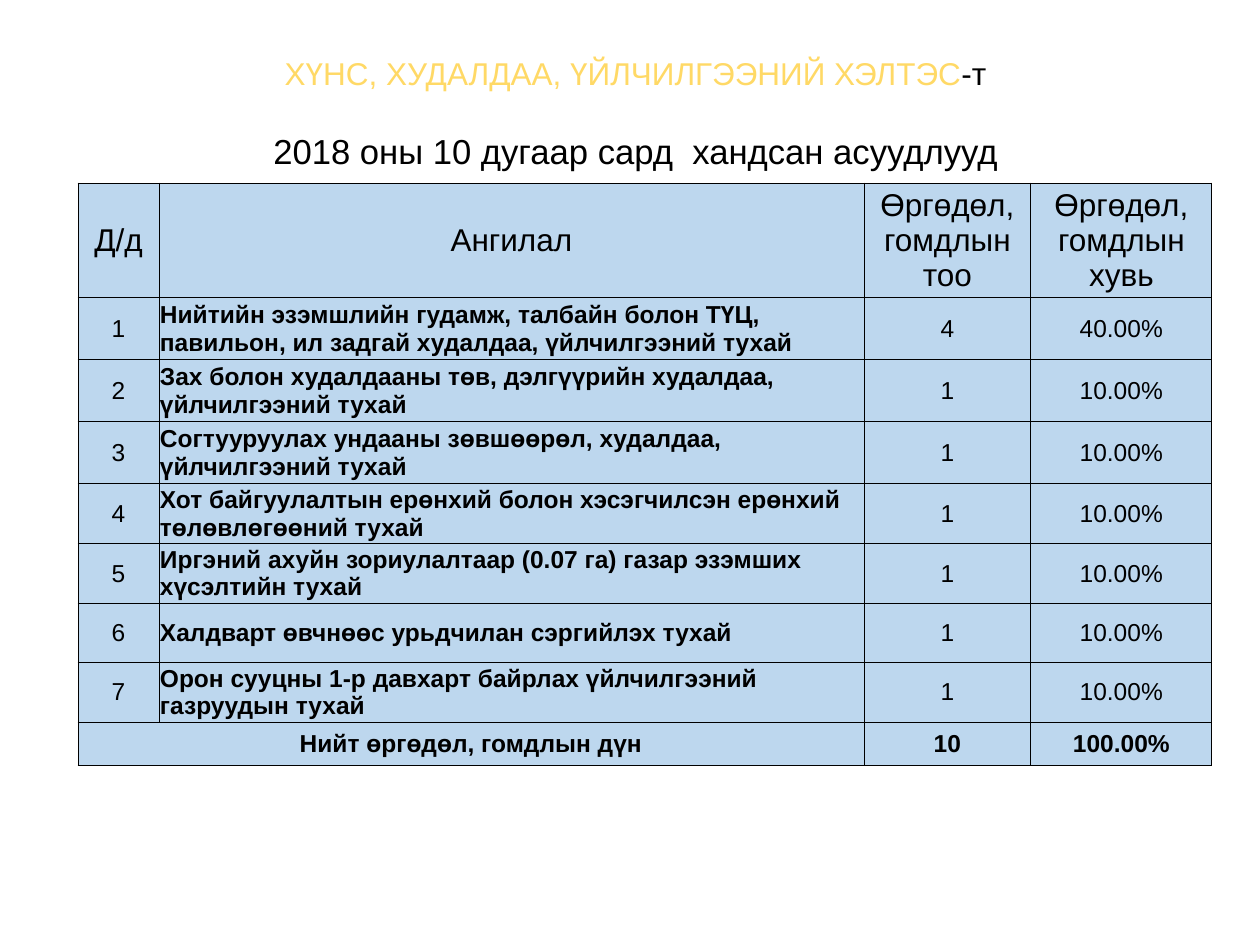
from lxml import etree
from pptx import Presentation
from pptx.dml.color import RGBColor
from pptx.enum.text import MSO_ANCHOR, PP_ALIGN
from pptx.oxml.ns import qn
from pptx.util import Emu, Pt

CENTER, LEFT = PP_ALIGN.CENTER, PP_ALIGN.LEFT
MIDDLE = MSO_ANCHOR.MIDDLE
EMU_PER_PX = 914400 / 126
FONT = "Arial"
BLACK, GOLD, LIGHT_BLUE = "000000", "FFD966", "BDD7EE"

COLUMN_WIDTHS = [81, 705, 167, 181]
ROW_HEIGHTS = [83, 62, 62, 62, 44, 59, 59, 59, 44]
HEADINGS = ["Д/д", "Ангилал", "Өргөдөл, гомдлын тоо", "Өргөдөл, гомдлын хувь"]
ISSUES = [
    ("Нийтийн эзэмшлийн гудамж, талбайн болон ТҮЦ, павильон, ил задгай худалдаа, "
     "үйлчилгээний тухай", 4),
    ("Зах болон худалдааны төв, дэлгүүрийн худалдаа, үйлчилгээний тухай", 1),
    ("Согтууруулах ундааны зөвшөөрөл, худалдаа, үйлчилгээний тухай", 1),
    ("Хот байгуулалтын ерөнхий болон хэсэгчилсэн ерөнхий төлөвлөгөөний тухай", 1),
    ("Иргэний ахуйн зориулалтаар (0.07 га) газар эзэмших хүсэлтийн тухай", 1),
    ("Халдварт өвчнөөс урьдчилан сэргийлэх тухай", 1),
    ("Орон сууцны 1-р давхарт байрлах үйлчилгээний газруудын тухай", 1),
]


def px(length):
    return Emu(round(length * EMU_PER_PX))


def color(hex_value):
    return RGBColor.from_string(hex_value)


def style(paragraph, size, bold=False, align=CENTER):
    paragraph.alignment = align
    font = paragraph.font
    font.name, font.size, font.bold = FONT, Pt(size), bold
    font.color.rgb = color(BLACK)


def add_title(slide, left, top, width, height):
    frame = slide.shapes.add_textbox(px(left), px(top), px(width), px(height)).text_frame
    frame.word_wrap = True
    frame.vertical_anchor = MIDDLE
    frame.margin_top = frame.margin_bottom = 0

    department = frame.paragraphs[0]
    style(department, 18)
    for text, tint in [("ХҮНС, ХУДАЛДАА, ҮЙЛЧИЛГЭЭНИЙ ХЭЛТЭС", GOLD), ("-т", BLACK)]:
        run = department.add_run()
        run.text = text
        run.font.color.rgb = color(tint)

    period = frame.add_paragraph()
    period.text = "2018 оны 10 дугаар сард  хандсан асуудлууд"
    style(period, 19.8)
    period.space_before = Pt(22)


def add_borders(cell):
    properties = cell._tc.get_or_add_tcPr()
    for side in ("lnL", "lnR", "lnT", "lnB"):
        line = etree.SubElement(properties, qn(f"a:{side}"), w=str(Pt(0.5)))
        fill = etree.SubElement(line, qn("a:solidFill"))
        etree.SubElement(fill, qn("a:srgbClr"), val=BLACK)


def fill_cell(cell, text, size, bold, align):
    add_borders(cell)
    cell.fill.solid()
    cell.fill.fore_color.rgb = color(LIGHT_BLUE)
    cell.vertical_anchor = MIDDLE
    cell.margin_left = cell.margin_right = cell.margin_top = px(1)
    cell.margin_bottom = 0
    cell.text = text
    style(cell.text_frame.paragraphs[0], size, bold, align)


def add_issue_table(slide, left, top):
    total = sum(count for _, count in ISSUES)
    rows = [HEADINGS]
    rows += [[str(number), issue, str(count), f"{count / total:.2%}"]
             for number, (issue, count) in enumerate(ISSUES, 1)]
    rows.append(["Нийт өргөдөл, гомдлын дүн", "", str(total), "100.00%"])
    last = len(rows) - 1

    table = slide.shapes.add_table(
        len(rows), len(COLUMN_WIDTHS), px(left), px(top),
        px(sum(COLUMN_WIDTHS)), px(sum(ROW_HEIGHTS))).table
    for column, width in zip(table.columns, COLUMN_WIDTHS):
        column.width = px(width)
    for row, height in zip(table.rows, ROW_HEIGHTS):
        row.height = px(height)

    for r, values in enumerate(rows):
        for c, text in enumerate(values):
            is_issue = 0 < r < last and c == 1
            fill_cell(table.cell(r, c), text, 18 if r == 0 else 14,
                      is_issue or r == last, LEFT if is_issue else CENTER)
    table.cell(last, 0).merge(table.cell(last, 1))


def main():
    deck = Presentation()
    deck.slide_width, deck.slide_height = px(1260), px(945)
    slide = deck.slides.add_slide(deck.slide_layouts[6])
    add_title(slide, 102, 72, 1067, 82)
    add_issue_table(slide, 78, 183)
    deck.save("out.pptx")


if __name__ == "__main__":
    main()
